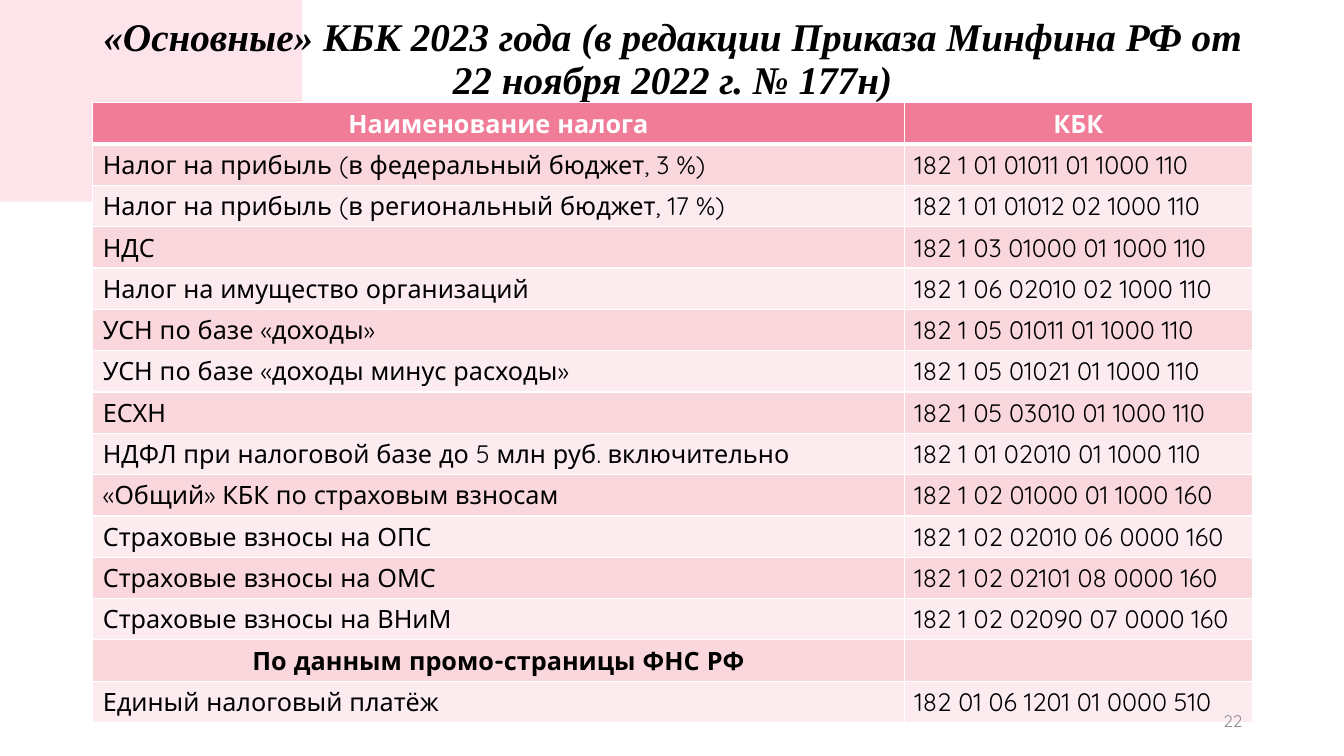
from dataclasses import dataclass

from lxml import etree
from pptx import Presentation
from pptx.dml import color
from pptx.enum import text
from pptx.oxml import ns
from pptx.util import Inches, Pt


@dataclass(frozen=True)
class Theme:
    heading_font: str = "Times New Roman"
    body_font: str = "Quicksand"
    heading_size: int = 28
    body_size: int = 18
    number_size: int = 12
    accent: str = "F07C98"
    dark_band: str = "F9D7DD"
    light_band: str = "FCECEF"
    white: str = "FFFFFF"
    black: str = "000000"
    grey: str = "8C8C8C"
    brush_alpha: int = 20


class SlideBuilder:
    def __init__(self, slide, theme):
        self.slide = slide
        self.theme = theme

    def paint(self, target, rgb):
        target.fill.solid()
        target.fill.fore_color.rgb = color.RGBColor.from_string(rgb)

    def add_words(self, frame, words, font, size, rgb, align, bold=False, italic=False):
        paragraph = frame.paragraphs[0]
        paragraph.alignment = align
        run = paragraph.add_run()
        run.text = words
        run.font.name = font
        run.font.size = Pt(size)
        run.font.bold = bold
        run.font.italic = italic
        run.font.color.rgb = color.RGBColor.from_string(rgb)
        return paragraph

    def textbox(self, box, *style, **emphasis):
        frame = self.slide.shapes.add_textbox(*map(Inches, box)).text_frame
        frame.word_wrap = True
        frame.vertical_anchor = text.MSO_ANCHOR.MIDDLE
        return self.add_words(frame, *style, **emphasis)

    def brush_stroke(self, outline):
        builder = self.slide.shapes.build_freeform(*outline[0], scale=Inches(1))
        builder.add_line_segments(outline[1:], close=True)
        stroke = builder.convert_to_shape()
        stroke.shadow.inherit = False
        stroke.line.fill.background()
        self.paint(stroke, self.theme.accent)
        tint = stroke.element.spPr.find(".//" + ns.qn("a:srgbClr"))
        etree.SubElement(tint, ns.qn("a:alpha"), val=str(self.theme.brush_alpha * 1000))

    def borders(self, cell, top, bottom):
        properties = cell._tc.get_or_add_tcPr()
        sides = {"a:lnL": 1, "a:lnR": 1, "a:lnT": top, "a:lnB": bottom}
        for position, (side, width) in enumerate(sides.items()):
            line = etree.Element(ns.qn(side), w=str(int(Pt(width))))
            fill = etree.SubElement(line, ns.qn("a:solidFill"))
            etree.SubElement(fill, ns.qn("a:srgbClr"), val=self.theme.white)
            properties.insert(position, line)

    def table(self, left, top, widths, row_height, rows, section):
        theme = self.theme
        grid = self.slide.shapes.add_table(
            len(rows), len(widths), Inches(left), Inches(top),
            Inches(sum(widths)), Inches(row_height * len(rows))).table
        for column, width in zip(grid.columns, widths):
            column.width = Inches(width)
        for index, entries in enumerate(rows):
            header = index == 0
            band = theme.dark_band if index % 2 else theme.light_band
            emphasis = header or entries[0] == section
            align = text.PP_ALIGN.CENTER if emphasis else text.PP_ALIGN.LEFT
            for column, words in enumerate(entries):
                cell = grid.cell(index, column)
                self.paint(cell, theme.accent if header else band)
                self.borders(cell, 3 if index == 1 else 1, 3 if header else 1)
                if words:
                    self.add_words(cell.text_frame, words, theme.body_font, theme.body_size,
                                   theme.white if header else theme.black, align, bold=emphasis)


BRUSH = [
    (0, 0.34), (0.25, 0.37), (0.66, 0.38), (1.02, 0.37), (1.26, 0.37), (1.51, 0.38),
    (1.94, 0.41), (2.22, 0.42), (2.48, 0.41), (2.66, 0.41), (2.8, 0.47), (2.71, 0.49),
    (2.55, 0.54), (2.53, 0.57), (2.56, 0.59), (2.62, 0.62), (2.5, 0.62), (2.38, 0.66),
    (2.46, 0.68), (2.56, 0.7), (2.66, 0.71), (2.75, 0.74), (2.51, 0.75), (2.63, 0.78),
    (2.73, 0.81), (2.8, 0.82), (2.88, 0.83), (2.9, 0.85), (2.87, 0.88), (2.84, 0.88),
    (2.63, 0.88), (2.96, 0.92), (3.3, 0.94), (3.21, 0.97), (3.22, 1.03), (3.18, 1.06),
    (3.11, 1.07), (3.07, 1.11), (3, 1.13), (2.83, 1.16), (2.8, 1.2), (2.78, 1.25),
    (2.74, 1.28), (3.08, 1.28), (2.89, 1.33), (2.69, 1.38), (2.73, 1.42), (2.62, 1.44),
    (2.52, 1.48), (2.63, 1.48), (2.33, 1.61), (1.97, 1.72), (1.5, 1.81), (1.02, 1.88),
    (0.65, 1.91), (0.23, 1.9), (0.07, 1.89), (0, 1.88),
]
SECTION = "По данным промо-страницы ФНС РФ"
TAX_CODES = [
    ("Наименование налога", "КБК"),
    ("Налог на прибыль (в федеральный бюджет, 3 %)", "182 1 01 01011 01 1000 110"),
    ("Налог на прибыль (в региональный бюджет, 17 %)", "182 1 01 01012 02 1000 110"),
    ("НДС", "182 1 03 01000 01 1000 110"),
    ("Налог на имущество организаций", "182 1 06 02010 02 1000 110"),
    ("УСН по базе «доходы»", "182 1 05 01011 01 1000 110"),
    ("УСН по базе «доходы минус расходы»", "182 1 05 01021 01 1000 110"),
    ("ЕСХН", "182 1 05 03010 01 1000 110"),
    ("НДФЛ при налоговой базе до 5 млн руб. включительно", "182 1 01 02010 01 1000 110"),
    ("«Общий» КБК по страховым взносам", "182 1 02 01000 01 1000 160"),
    ("Страховые взносы на ОПС", "182 1 02 02010 06 0000 160"),
    ("Страховые взносы на ОМС", "182 1 02 02101 08 0000 160"),
    ("Страховые взносы на ВНиМ", "182 1 02 02090 07 0000 160"),
    (SECTION, ""),
    ("Единый налоговый платёж", "182 01 06 1201 01 0000 510"),
]


def main():
    deck = Presentation()
    deck.slide_width = Inches(13.33)
    deck.slide_height = Inches(7.5)
    theme = Theme()
    page = SlideBuilder(deck.slides.add_slide(deck.slide_layouts[6]), theme)

    page.brush_stroke(BRUSH)
    heading = page.textbox(
        (0.92, 0.18, 11.5, 0.84),
        "«Основные» КБК 2023 года (в редакции Приказа Минфина РФ от 22 ноября 2022 г. № 177н)",
        theme.heading_font, theme.heading_size, theme.black, text.PP_ALIGN.CENTER,
        bold=True, italic=True)
    heading.line_spacing = 0.9
    page.table(0.92, 1.02, (8.05, 3.45), 0.41, TAX_CODES, SECTION)
    page.textbox((9.42, 6.95, 3, 0.4), "22", theme.body_font, theme.number_size,
                 theme.grey, text.PP_ALIGN.RIGHT)

    deck.save("out.pptx")


if __name__ == "__main__":
    main()
